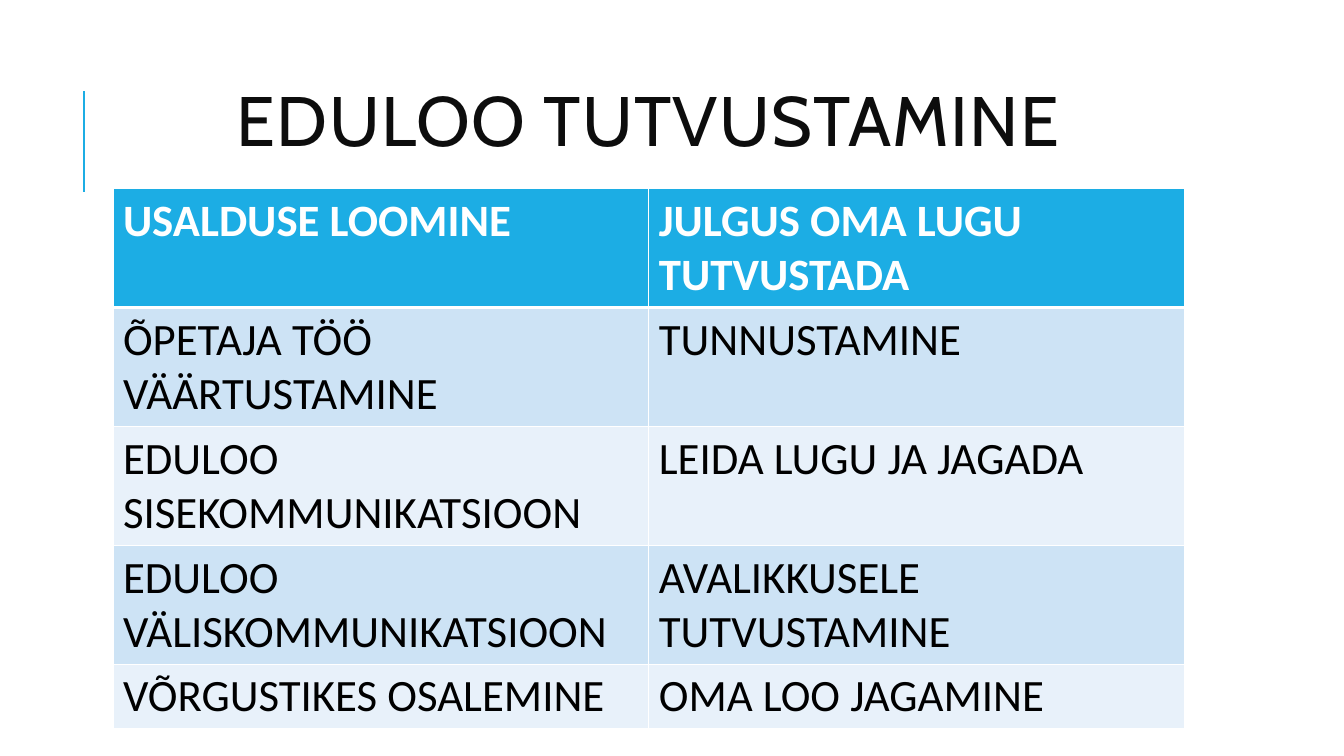
from lxml import etree
from pptx import Presentation, util as u
from pptx.dml.color import RGBColor
from pptx.enum import shapes, text
from pptx.oxml.ns import qn

# Content
TITLE = "EDULOO TUTVUSTAMINE"
ROWS = [
    ("USALDUSE LOOMINE", "JULGUS OMA LUGU TUTVUSTADA"),
    ("ÕPETAJA TÖÖ VÄÄRTUSTAMINE", "TUNNUSTAMINE"),
    ("EDULOO SISEKOMMUNIKATSIOON", "LEIDA LUGU JA JAGADA"),
    ("EDULOO VÄLISKOMMUNIKATSIOON", "AVALIKKUSELE TUTVUSTAMINE"),
    ("VÕRGUSTIKES OSALEMINE", "OMA LOO JAGAMINE"),
]
ACCENT, WHITE, BLACK, TITLE_INK = "1CADE4", "FFFFFF", "000000", "0D0D0D"
BANDS = ("E8F1FA", "CDE3F5")

# Layout in inches
LEFT, WIDTH = 1.12, 10.63
TITLE_TOP, TITLE_HEIGHT = 0.64, 1.23
TABLE_TOP = TITLE_TOP + TITLE_HEIGHT
ROW_HEIGHTS = [1.18] * 4 + [0.64]
RULE_X, RULE_TOP, RULE_BOTTOM = 0.83, 0.9, 1.9


def color(value):
    return RGBColor.from_string(value)


def style_run(run, font, size, ink, bold=False):
    run.font.name, run.font.size, run.font.bold = font, u.Pt(size), bold
    run.font.color.rgb = color(ink)


def set_borders(cell, widths):
    properties = cell._tc.get_or_add_tcPr()
    for index, (side, points) in enumerate(widths.items()):
        line = etree.Element(qn(f"a:{side}"), w=str(u.Pt(points)))
        fill = etree.SubElement(line, qn("a:solidFill"))
        etree.SubElement(fill, qn("a:srgbClr"), val=WHITE)
        properties.insert(index, line)


presentation = Presentation()
presentation.slide_width, presentation.slide_height = u.Inches(13.33), u.Inches(7.5)
slide = presentation.slides.add_slide(presentation.slide_layouts[6])

# Accent rule
rule = slide.shapes.add_connector(
    shapes.MSO_CONNECTOR.STRAIGHT,
    *(u.Inches(v) for v in (RULE_X, RULE_BOTTOM, RULE_X, RULE_TOP)))
rule.line.color.rgb, rule.line.width = color(ACCENT), u.Pt(1.5)
etree.SubElement(rule._element.spPr, qn("a:effectLst"))

# Title
title = slide.shapes.add_textbox(
    *(u.Inches(v) for v in (LEFT, TITLE_TOP, WIDTH, TITLE_HEIGHT)))
frame = title.text_frame
frame.word_wrap, frame.vertical_anchor = True, text.MSO_ANCHOR.MIDDLE
frame.text = TITLE
paragraph = frame.paragraphs[0]
paragraph.alignment, paragraph.line_spacing = text.PP_ALIGN.CENTER, 0.8
style_run(paragraph.runs[0], "Cabin", 50, TITLE_INK)
paragraph.runs[0].font._element.set("spc", "100")

# Table
table = slide.shapes.add_table(
    len(ROWS), len(ROWS[0]),
    *(u.Inches(v) for v in (LEFT, TABLE_TOP, WIDTH, sum(ROW_HEIGHTS)))).table
for row, (words, height) in enumerate(zip(ROWS, ROW_HEIGHTS)):
    table.rows[row].height = u.Inches(height)
    header = row == 0
    for column, word in enumerate(words):
        cell = table.cell(row, column)
        cell.text = word
        style_run(cell.text_frame.paragraphs[0].runs[0], "Calibri", 32,
                  WHITE if header else BLACK, header)
        cell.fill.solid()
        cell.fill.fore_color.rgb = color(ACCENT if header else BANDS[row % 2])
        set_borders(cell, {"lnL": 1, "lnR": 1, "lnT": 3 if row == 1 else 1,
                           "lnB": 3 if header else 1})

presentation.save("out.pptx")
